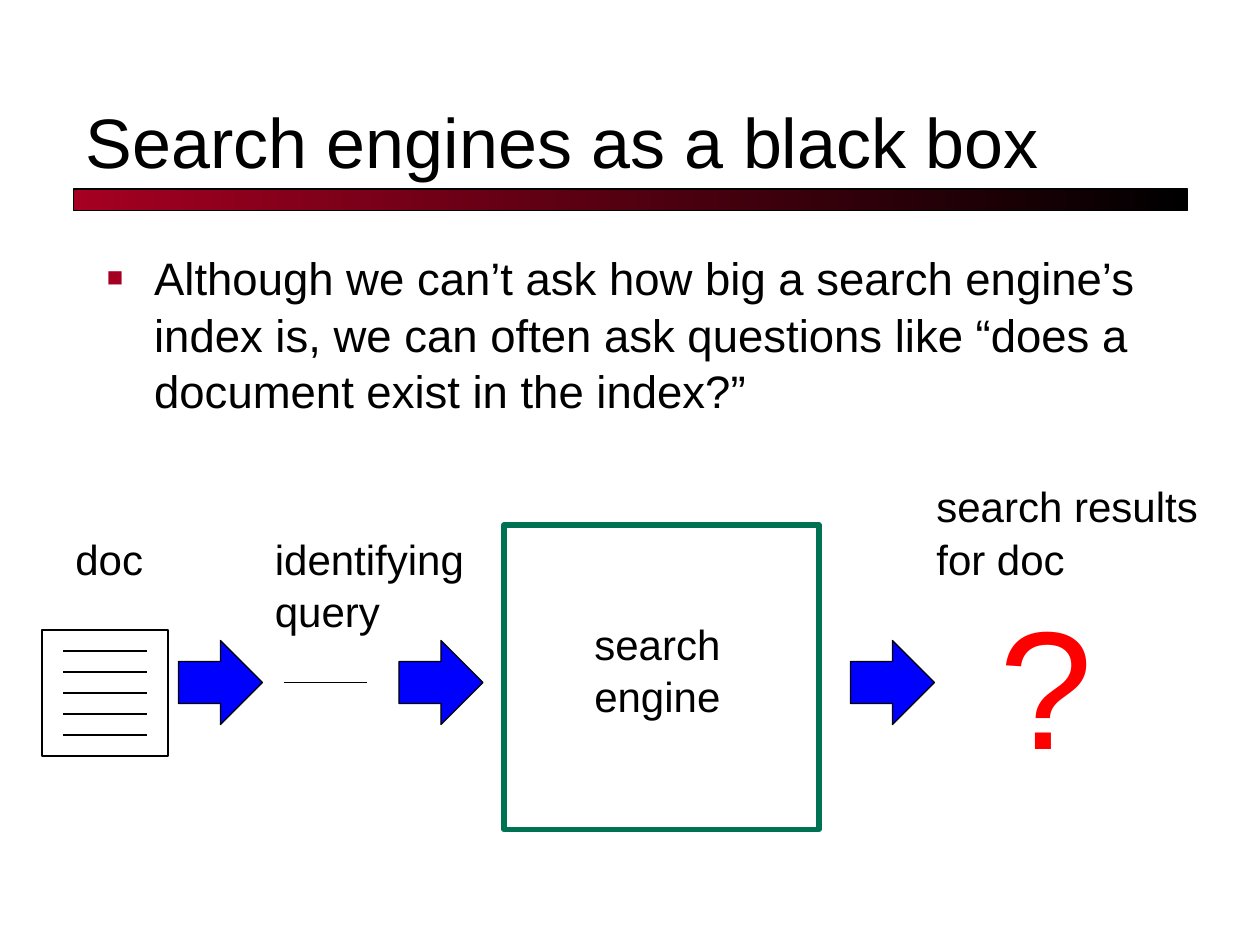
"""Build the slide on search engines seen as a black box."""
from lxml.etree import SubElement
from pptx import Presentation
from pptx.dml.color import RGBColor
from pptx.enum.shapes import MSO_CONNECTOR, MSO_SHAPE
from pptx.enum.text import MSO_ANCHOR, MSO_AUTO_SIZE
from pptx.oxml.ns import qn
from pptx.util import Pt

BLACK = RGBColor(0x00, 0x00, 0x00)
WINE = RGBColor(0xA5, 0x00, 0x21)
GREEN = RGBColor(0x00, 0x72, 0x54)
BLUE = RGBColor(0x00, 0x00, 0xFF)
RED = RGBColor(0xFF, 0x00, 0x00)

TITLE = "Search engines as a black box"
POINT = ("Although we can’t ask how big a search engine’s index is, we can "
         "often ask questions like “does a document exist in the index?”")
LABELS = [
    ("search\vengine", (332.5, 348.5, 87, 65.5)),
    ("doc", (36, 300, 53.5, 36)),
    ("identifying\nquery", (150, 300, 124, 65.5)),
    ("search results\nfor doc", (528, 270, 165.5, 65.5)),
]
ARROWS = [102, 228, 486]
RULES = [(36, 372 + 12 * row) for row in range(5)] + [(162, 390)]
RULE = 48

deck = Presentation()
deck.slide_width, deck.slide_height = Pt(720), Pt(540)
slide = deck.slides.add_slide(deck.slide_layouts[6])
shapes = slide.shapes


def add_text(text, box, size=24, color=BLACK, wrap=False,
             anchor=MSO_ANCHOR.TOP, bullet=None):
    frame = shapes.add_textbox(*map(Pt, box)).text_frame
    frame.word_wrap = wrap
    frame.auto_size = MSO_AUTO_SIZE.NONE if wrap else MSO_AUTO_SIZE.SHAPE_TO_FIT_TEXT
    frame.vertical_anchor = anchor
    frame.text = text
    for para in frame.paragraphs:
        para.line_spacing = 1.04
        for run in para.runs:
            font = run.font
            font.name, font.size, font.color.rgb = "Arial", Pt(size), color
        if bullet:
            add_mark(para, bullet)


def add_mark(para, color):
    props = para._p.get_or_add_pPr()
    props.set("marL", str(Pt(27)))
    props.set("indent", str(-Pt(27)))
    tint = SubElement(props, qn("a:buClr"))
    SubElement(tint, qn("a:srgbClr"), val=str(color))
    SubElement(props, qn("a:buSzPct"), val="60000")
    SubElement(props, qn("a:buFont"), typeface="Arial")
    SubElement(props, qn("a:buChar"), char="■")


def add_form(kind, box, fill=None, line=BLACK, width=0.75):
    form = shapes.add_shape(kind, *map(Pt, box))
    form.shadow.inherit = False
    form.line.color.rgb, form.line.width = line, Pt(width)
    if fill is None:
        form.fill.background()
    else:
        form.fill.solid()
        form.fill.fore_color.rgb = fill
    return form


def add_rule(left, top):
    rule = shapes.add_connector(
        MSO_CONNECTOR.STRAIGHT, Pt(left), Pt(top), Pt(left + RULE), Pt(top))
    rule.line.color.rgb, rule.line.width = BLACK, Pt(0.75)
    SubElement(rule._element.spPr, qn("a:effectLst"))


bar = add_form(MSO_SHAPE.RECTANGLE, (42, 108, 636.5, 12.25))
bar.fill.gradient()
bar.fill.gradient_angle = 0
for stop, color in zip(bar.fill.gradient_stops, (WINE, BLACK)):
    stop.color.rgb = color

add_text(TITLE, (42, 30, 636, 78), size=40, wrap=True, anchor=MSO_ANCHOR.BOTTOM)
add_text(POINT, (54, 138, 612, 114), size=26, wrap=True, bullet=WINE)
add_form(MSO_SHAPE.RECTANGLE, (288, 300, 180, 174), line=GREEN, width=3)
add_form(MSO_SHAPE.RECTANGLE, (24, 360, 72, 72))
for left, top in RULES:
    add_rule(left, top)
for left in ARROWS:
    add_form(MSO_SHAPE.RIGHT_ARROW, (left, 366, 48, 48), fill=BLUE)
for text, box in LABELS:
    add_text(text, box)
add_text("?", (564, 324, 68, 124), size=96, color=RED)

deck.save("out.pptx")
